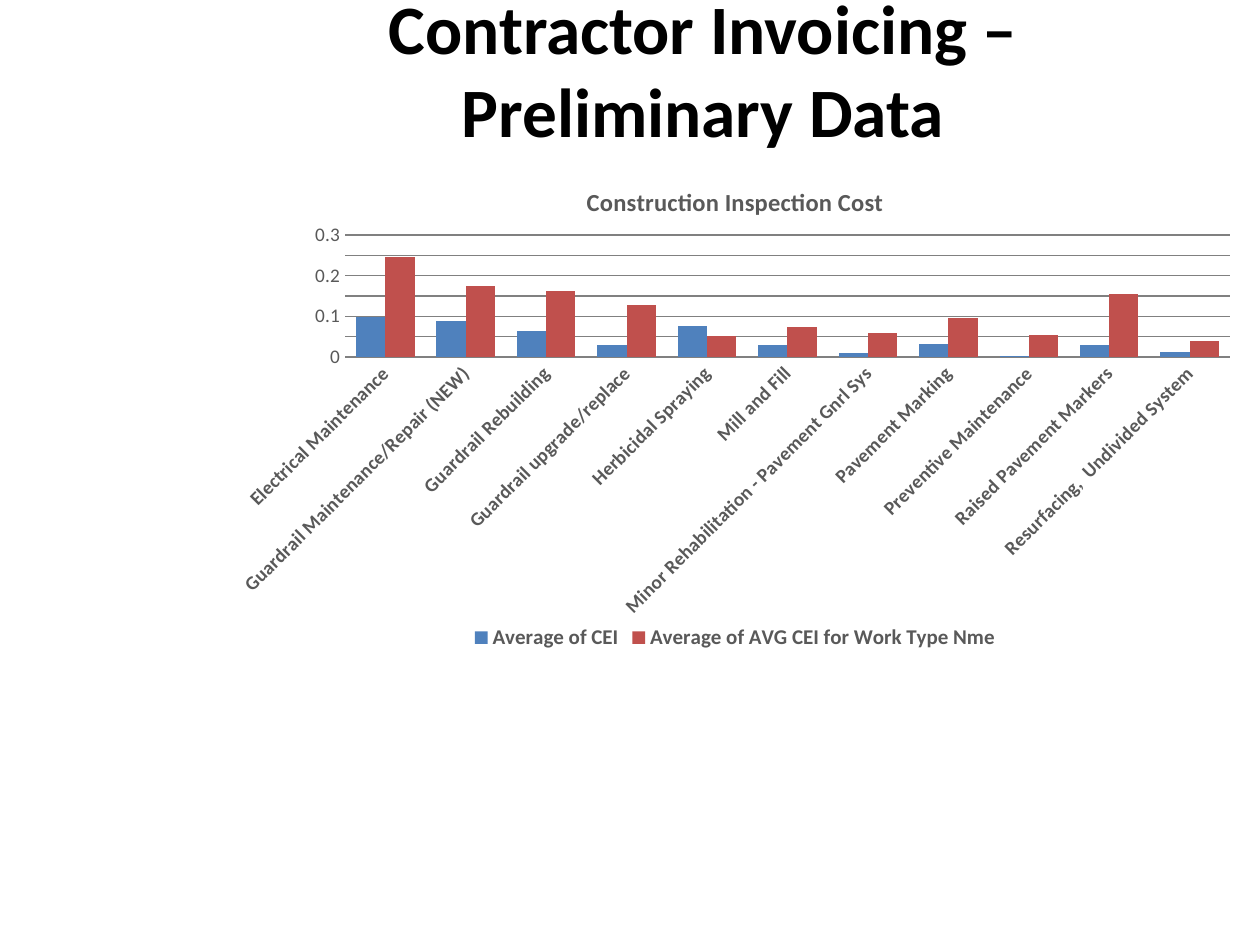
from pptx import Presentation
from pptx.chart.data import CategoryChartData
from pptx.dml.color import RGBColor
from pptx.enum.chart import XL_CHART_TYPE as ChartType, XL_LEGEND_POSITION as LegendSpot
from pptx.enum.chart import XL_TICK_MARK as TickMark
from pptx.enum.text import MSO_ANCHOR as Anchor, MSO_AUTO_SIZE as AutoSize, PP_ALIGN as Align
from pptx.util import Inches, Pt

COLORS = {"title": "000000", "label": "595959", "grid": "808080",
          "project": "4F81BD", "work_type": "C0504D"}

INSPECTION_COSTS = [
    ("Electrical Maintenance", 0.098, 0.245),
    ("Guardrail Maintenance/Repair (NEW)", 0.089, 0.174),
    ("Guardrail Rebuilding", 0.063, 0.163),
    ("Guardrail upgrade/replace", 0.03, 0.127),
    ("Herbicidal Spraying", 0.076, 0.052),
    ("Mill and Fill", 0.03, 0.075),
    ("Minor Rehabilitation - Pavement Gnrl Sys", 0.011, 0.058),
    ("Pavement Marking", 0.032, 0.096),
    ("Preventive Maintenance", 0.002, 0.054),
    ("Raised Pavement Markers", 0.03, 0.156),
    ("Resurfacing,  Undivided System", 0.013, 0.039),
]
SERIES = [("Average of CEI", "project"),
          ("Average of AVG CEI for Work Type Nme", "work_type")]


class SlideBuilder:
    font_name = "Calibri"
    columns, rows = 100, 75

    def __init__(self, deck):
        self.deck = deck
        self.page = deck.slides.add_slide(deck.slide_layouts[5])

    def frame(self, left, top, width, height):
        column = self.deck.slide_width / self.columns
        row = self.deck.slide_height / self.rows
        return [round(size) for size in
                (left * column, top * row, width * column, height * row)]

    def style(self, font, size, color, bold=False):
        font.name = self.font_name
        font.size = Pt(size)
        font.bold = bold
        font.color.rgb = RGBColor.from_string(COLORS[color])

    def title(self, text, area):
        box = self.page.shapes.title
        box.left, box.top, box.width, box.height = self.frame(*area)
        frame = box.text_frame
        frame.text = text
        frame.word_wrap = True
        frame.auto_size = AutoSize.NONE
        frame.vertical_anchor = Anchor.MIDDLE
        para = frame.paragraphs[0]
        para.alignment = Align.CENTER
        self.style(para.font, 39.6, "title", bold=True)

    def axis(self, axis, bold):
        axis.major_tick_mark = axis.minor_tick_mark = TickMark.NONE
        axis.format.line.fill.background()
        self.style(axis.tick_labels.font, 11, "label", bold)

    def column_chart(self, heading, series, records, area):
        data = CategoryChartData()
        names, *columns = zip(*records)
        data.categories = names
        for (name, _), values in zip(series, columns):
            data.add_series(name, values)
        chart = self.page.shapes.add_chart(
            ChartType.COLUMN_CLUSTERED, *self.frame(*area), data).chart
        self.style(chart.font, 10, "title")

        chart.has_title = True
        chart.chart_title.include_in_layout = False
        chart.chart_title.text_frame.text = heading
        para = chart.chart_title.text_frame.paragraphs[0]
        self.style(para.font, 14, "label", bold=True)

        chart.has_legend = True
        chart.legend.position = LegendSpot.BOTTOM
        chart.legend.include_in_layout = False
        self.style(chart.legend.font, 12, "label", bold=True)

        self.axis(chart.category_axis, bold=True)
        labels = chart.category_axis.tick_labels
        labels.font._element.getparent().getparent().getparent().bodyPr.set("rot", "-2700000")

        values = chart.value_axis
        self.axis(values, bold=False)
        values.minimum_scale, values.maximum_scale, values.major_unit = 0, 0.3, 0.05
        values.tick_labels.number_format = "General"
        values.tick_labels.number_format_is_linked = False
        grid = values.major_gridlines.format.line
        grid.width = Pt(0.75)
        grid.color.rgb = RGBColor.from_string(COLORS["grid"])

        plot = chart.plots[0]
        plot.gap_width, plot.overlap = 75, 0
        plot.vary_by_categories = False
        for bars, (_, color) in zip(plot.series, series):
            bars.format.fill.solid()
            bars.format.fill.fore_color.rgb = RGBColor.from_string(COLORS[color])
            bars.invert_if_negative = False


def main():
    deck = Presentation()
    deck.slide_width, deck.slide_height = Inches(10), Inches(7.5)
    builder = SlideBuilder(deck)
    builder.title("Contractor Invoicing – Preliminary Data", (17.4, 0, 76.8, 10.9))
    builder.column_chart("Construction Inspection Cost", SERIES, INSPECTION_COSTS,
                         (17.45, 13, 81.8, 39))
    deck.save("out.pptx")


if __name__ == "__main__":
    main()
